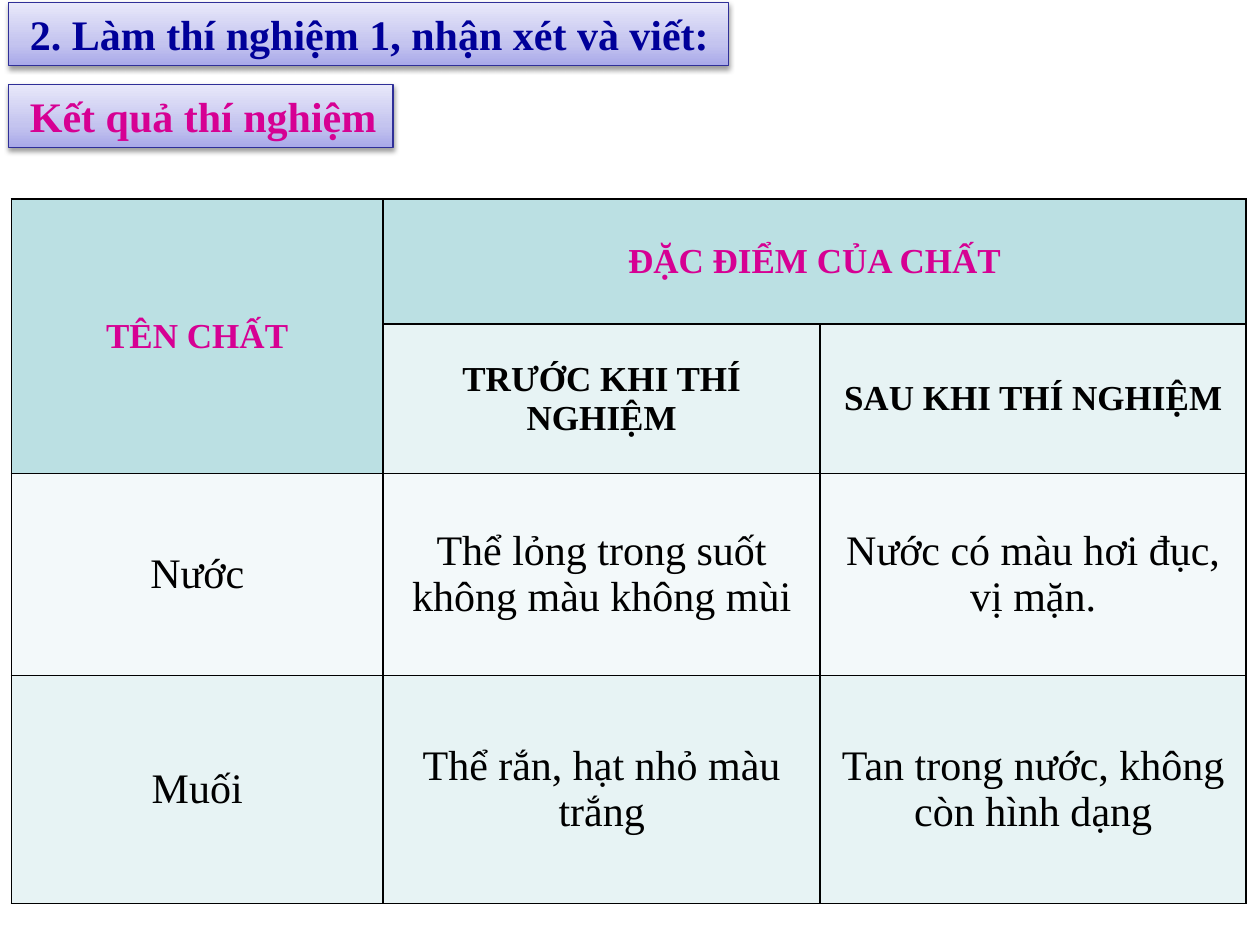
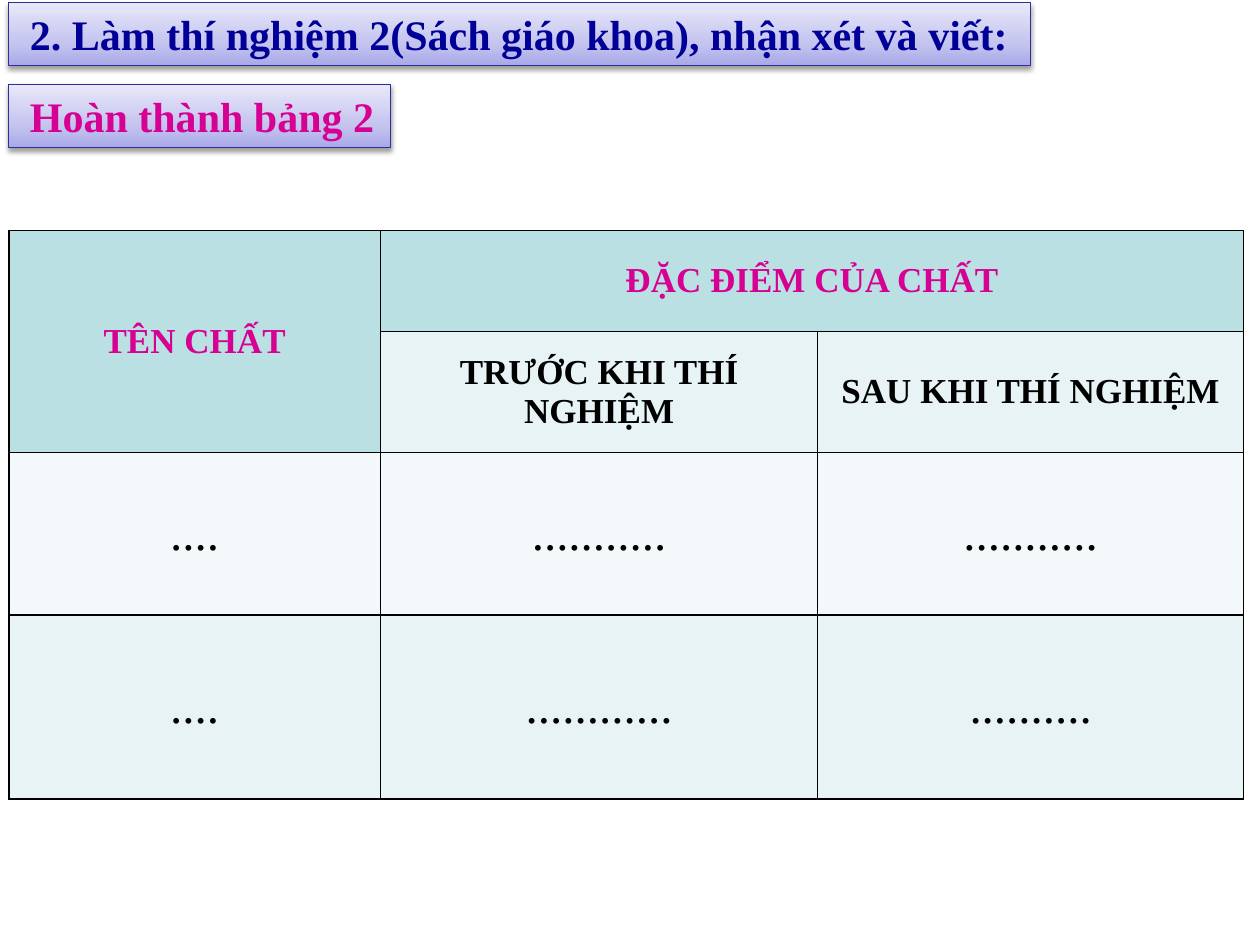
from copy import deepcopy
from dataclasses import dataclass

from lxml.etree import SubElement
from pptx import Presentation
from pptx.dml.color import RGBColor
from pptx.enum.shapes import MSO_SHAPE
from pptx.enum.text import MSO_ANCHOR, MSO_AUTO_SIZE, PP_ALIGN
from pptx.oxml import parse_xml
from pptx.oxml.ns import nsdecls, qn
from pptx.slide import Slide
from pptx.table import _Cell
from pptx.text.text import _Paragraph
from pptx.util import Inches, Pt


@dataclass(frozen=True)
class Theme:
    font: str = "Times New Roman"
    indent_font: str = "Arial"
    navy: str = "000099"
    pink: str = "D60093"
    black: str = "000000"
    banner_line: str = "2F2F98"
    banner_stops: tuple = ((0, "A9A9E9"), (0.35, "C4C4EF"), (1, "E8E8FA"))
    header_fill: str = "BBE0E3"
    band_fills: tuple = ("E7F3F4", "F3F9FA")
    indent_size: int = 18
    banner_size: int = 24
    header_size: int = 20


@dataclass(frozen=True)
class Banner:
    text: str
    top: float
    width: float
    color: str


@dataclass(frozen=True)
class ResultTable:
    left: float
    top: float
    row_heights: tuple[float, ...]
    body_size: int
    body: tuple[tuple[str, ...], ...]


@dataclass(frozen=True)
class Experiment:
    banners: tuple[Banner, ...]
    table: ResultTable


THEME = Theme()
BANNER_LEFT, BANNER_HEIGHT = 0.07, 0.5
TITLE_TOP, SUBTITLE_TOP = 0.02, 0.67
COLUMN_WIDTHS = (2.95, 3.47, 3.38)
HEADER = (
    ("TÊN CHẤT", "ĐẶC ĐIỂM CỦA CHẤT", ""),
    ("", "TRƯỚC KHI THÍ NGHIỆM", "SAU KHI THÍ NGHIỆM"),
)

EXPERIMENTS = (
    Experiment(
        (
            Banner("2. Làm thí nghiệm 1, nhận xét và viết:", TITLE_TOP, 5.71, THEME.navy),
            Banner("Kết quả thí nghiệm", SUBTITLE_TOP, 3.05, THEME.pink),
        ),
        ResultTable(0.09, 1.58, (0.99, 1.19, 1.6, 1.81), 24, (
            ("Nước", "Thể lỏng trong suốt không màu không mùi",
             "Nước có màu hơi đục, vị mặn."),
            ("Muối", "Thể rắn, hạt nhỏ màu trắng",
             "Tan trong nước, không còn hình dạng"),
        )),
    ),
    Experiment(
        (
            Banner("2. Làm thí nghiệm 2(Sách giáo khoa), nhận xét và viết:",
                   TITLE_TOP, 8.11, THEME.navy),
            Banner("Hoàn thành bảng 2", SUBTITLE_TOP, 3.03, THEME.pink),
        ),
        ResultTable(0.07, 1.83, (0.8, 0.96, 1.29, 1.46), 28, (
            ("....", "...........", "..........."),
            ("....", "............", ".........."),
        )),
    ),
)


def add_run(paragraph: _Paragraph, text: str, size: int, color: str,
            bold: bool = True, font: str = THEME.font) -> None:
    run = paragraph.add_run()
    run.text = text
    run.font.name = font
    run.font.size = Pt(size)
    run.font.bold = bold
    run.font.color.rgb = RGBColor.from_string(color)


def add_banner(slide: Slide, banner: Banner) -> None:
    shape = slide.shapes.add_shape(
        MSO_SHAPE.RECTANGLE, Inches(BANNER_LEFT), Inches(banner.top),
        Inches(banner.width), Inches(BANNER_HEIGHT))
    shape.line.color.rgb = RGBColor.from_string(THEME.banner_line)
    shape.line.width = Pt(0.75)

    shape.fill.gradient()
    shape.fill.gradient_angle = 90
    properties = shape._element.spPr
    stop_list = properties.find(".//" + qn("a:gsLst"))
    stop_list.append(deepcopy(stop_list[0]))
    for stop, (position, color) in zip(shape.fill.gradient_stops, THEME.banner_stops):
        stop.position = position
        stop.color.rgb = RGBColor.from_string(color)

    properties.append(parse_xml(
        f'<a:effectLst {nsdecls("a")}>'
        f'<a:outerShdw blurRad="{Pt(3.1)}" dist="{Pt(1.6)}" dir="5400000" rotWithShape="0">'
        f'<a:srgbClr val="{THEME.black}"><a:alpha val="38000"/></a:srgbClr>'
        '</a:outerShdw></a:effectLst>'))

    frame = shape.text_frame
    frame.word_wrap = False
    frame.auto_size = MSO_AUTO_SIZE.SHAPE_TO_FIT_TEXT
    paragraph = frame.paragraphs[0]
    paragraph.alignment = PP_ALIGN.LEFT
    add_run(paragraph, " ", THEME.indent_size, THEME.black, font=THEME.indent_font)
    add_run(paragraph, banner.text, THEME.banner_size, banner.color)


def add_borders(cell: _Cell) -> None:
    """Draw all four sides; the lines must come before the cell's fill."""
    properties = cell._tc.get_or_add_tcPr()
    for index, side in enumerate(("lnL", "lnR", "lnT", "lnB")):
        line = SubElement(properties, qn(f"a:{side}"), w=str(Pt(1)))
        fill = SubElement(line, qn("a:solidFill"))
        SubElement(fill, qn("a:srgbClr"), val=THEME.black)
        properties.insert(index, line)


def add_result_table(slide: Slide, result: ResultTable) -> None:
    rows = HEADER + result.body
    table = slide.shapes.add_table(
        len(rows), len(COLUMN_WIDTHS), Inches(result.left), Inches(result.top),
        Inches(sum(COLUMN_WIDTHS)), Inches(sum(result.row_heights))).table
    for column, width in zip(table.columns, COLUMN_WIDTHS):
        column.width = Inches(width)
    for row, height in zip(table.rows, result.row_heights):
        row.height = Inches(height)
    table.cell(0, 0).merge(table.cell(1, 0))
    table.cell(0, 1).merge(table.cell(0, 2))

    for row_index, texts in enumerate(rows):
        is_header = row_index < len(HEADER)
        for column_index, text in enumerate(texts):
            is_heading = row_index == 0 or (is_header and column_index == 0)
            fill = THEME.header_fill if is_heading else THEME.band_fills[(row_index + 1) % 2]
            cell = table.cell(row_index, column_index)
            cell.fill.solid()
            cell.fill.fore_color.rgb = RGBColor.from_string(fill)
            cell.vertical_anchor = MSO_ANCHOR.MIDDLE
            add_borders(cell)
            if text:
                paragraph = cell.text_frame.paragraphs[0]
                paragraph.alignment = PP_ALIGN.CENTER
                add_run(paragraph, text,
                        THEME.header_size if is_header else result.body_size,
                        THEME.pink if is_heading else THEME.black, bold=is_header)


def main() -> None:
    presentation = Presentation()
    presentation.slide_width = Inches(10)
    presentation.slide_height = Inches(7.5)
    blank_layout = presentation.slide_layouts[6]
    for experiment in EXPERIMENTS:
        slide = presentation.slides.add_slide(blank_layout)
        for banner in experiment.banners:
            add_banner(slide, banner)
        add_result_table(slide, experiment.table)
    presentation.save("out.pptx")


if __name__ == "__main__":
    main()
